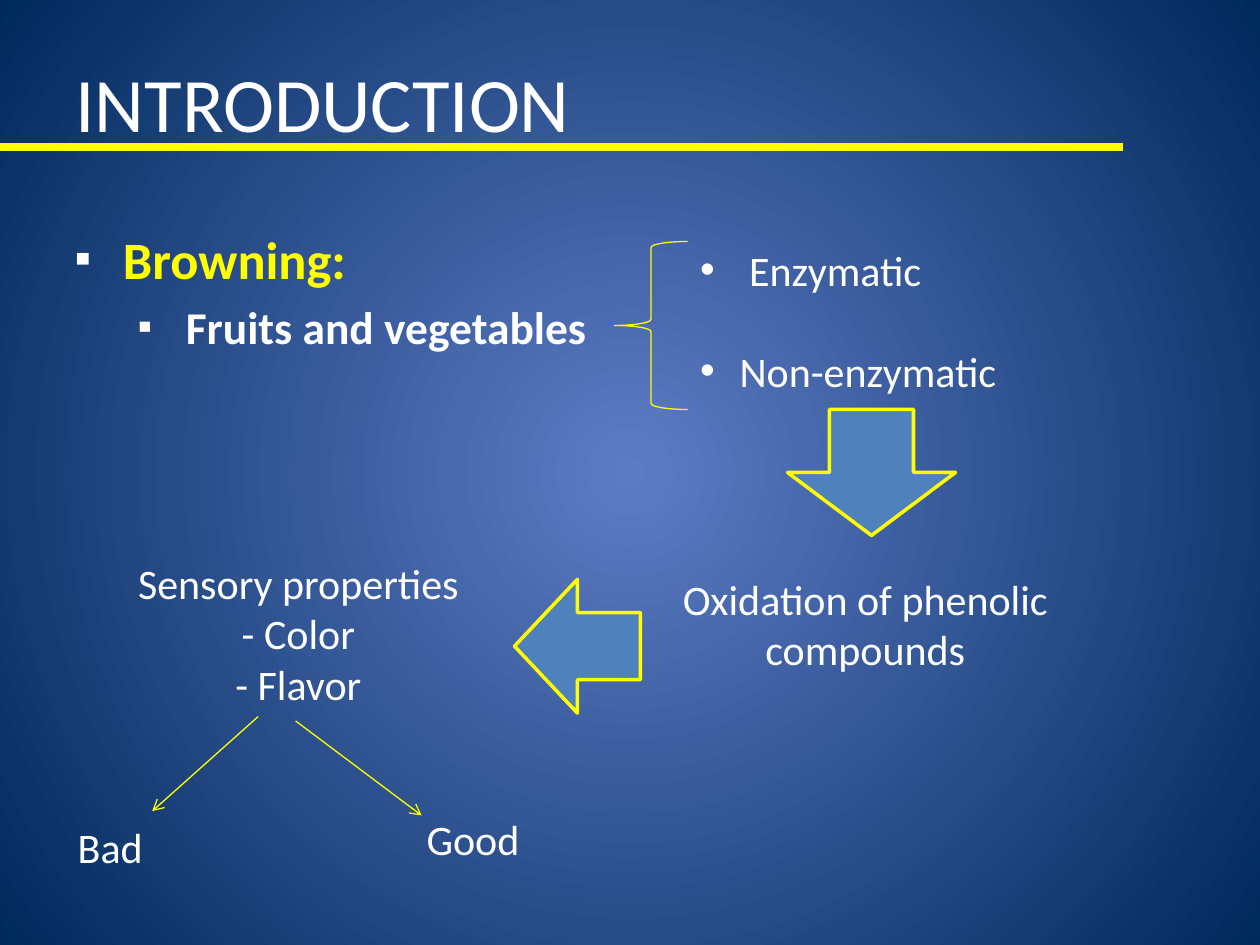
from lxml import etree
from pptx import Presentation
from pptx.dml.color import RGBColor
from pptx.enum.shapes import MSO_CONNECTOR, MSO_SHAPE
from pptx.enum.text import MSO_ANCHOR, MSO_AUTO_SIZE, PP_ALIGN
from pptx.oxml.ns import qn
from pptx.util import Pt

WHITE = RGBColor(0xFF, 0xFF, 0xFF)
YELLOW = RGBColor(0xFF, 0xFF, 0x00)
BLUE = RGBColor(0x4F, 0x81, 0xBD)
GLOW = RGBColor(0x5E, 0x7C, 0xC5)
NAVY = RGBColor(0x00, 0x29, 0x5C)
FONT = "Calibri"
LEFT, CENTER = PP_ALIGN.LEFT, PP_ALIGN.CENTER
MIDDLE = MSO_ANCHOR.MIDDLE
NO_FIT = MSO_AUTO_SIZE.NONE
STRAIGHT = MSO_CONNECTOR.STRAIGHT
BRACE = MSO_SHAPE.LEFT_BRACE
DOWN, BACK = MSO_SHAPE.DOWN_ARROW, MSO_SHAPE.LEFT_ARROW


def style(para, size, color=WHITE, bold=False, align=LEFT):
    para.alignment = align
    for run in para.runs:
        run.font.name = FONT
        run.font.size = Pt(size)
        run.font.bold = bold
        run.font.color.rgb = color


def bullet(para, char, left, hang, scale=100):
    props = para._p.get_or_add_pPr()
    props.set("marL", str(Pt(left)))
    props.set("indent", str(-Pt(hang)))
    tint = etree.SubElement(props, qn("a:buClr"))
    etree.SubElement(tint, qn("a:srgbClr"), val=str(WHITE))
    etree.SubElement(props, qn("a:buSzPct"), val=str(scale * 1000))
    etree.SubElement(props, qn("a:buFont"), typeface="Arial")
    etree.SubElement(props, qn("a:buChar"), char=char)


prs = Presentation()
prs.slide_width, prs.slide_height = Pt(720), Pt(540)
slide = prs.slides.add_slide(prs.slide_layouts[1])
shapes = slide.shapes

# Background: glow from the centre
fill = slide.background.fill
fill.gradient()
for stop, color, place in zip(fill.gradient_stops, (GLOW, NAVY), (0, 1)):
    stop.color.rgb = color
    stop.position = place
grad = slide.background._cSld.find(".//" + qn("a:gradFill"))
grad.remove(grad.find(qn("a:lin")))
round_fill = etree.SubElement(grad, qn("a:path"), path="circle")
etree.SubElement(round_fill, qn("a:fillToRect"),
                 l="50000", t="50000", r="50000", b="50000")

# Title
title = shapes.title
title.left, title.top, title.width, title.height = Pt(36), Pt(13), Pt(648), Pt(90)
title.text_frame.text = "INTRODUCTION"
title.text_frame.vertical_anchor = MIDDLE
style(title.text_frame.paragraphs[0], 44)

# Topic list
body = slide.placeholders[1]
body.left, body.top, body.width, body.height = Pt(36), Pt(126), Pt(378), Pt(108)
frame = body.text_frame
frame.auto_size = NO_FIT
frame.text = "Browning:\nFruits and vegetables"
topic, scope = frame.paragraphs
scope.level = 3
style(topic, 30, YELLOW, True)
style(scope, 26, WHITE, True)
bullet(topic, "■", 27, 27, 46)
bullet(scope, "■", 63, 27, 46)

# Text boxes: left, top, width, height, text, alignment
notes = [
    (393, 136, 243, 138, " Enzymatic\nNon-enzymatic", LEFT),
    (370, 324, 249, 65.5, "Oxidation of phenolic compounds", CENTER),
    (46, 315, 249, 94.5, "Sensory properties\n- Color\n- Flavor", CENTER),
    (0, 466, 126, 36, "Bad", CENTER),
    (210, 461.5, 126, 53, "Good ", CENTER),
]
for x, y, w, h, text, align in notes:
    frame = shapes.add_textbox(Pt(x), Pt(y), Pt(w), Pt(h)).text_frame
    frame.word_wrap = True
    frame.text = text
    for para in frame.paragraphs:
        style(para, 24, align=align)
        if align == LEFT:
            para.space_before = Pt(0 if para.text.startswith(" ") else 29)
            bullet(para, "•", 22.5, 22.5)

# Brace and block arrows
marks = [
    (BRACE, 351, 138, 42, 96, None, 0.75),
    (DOWN, 450, 234, 96, 72, BLUE, 2),
    (BACK, 294, 331, 72, 76.5, BLUE, 2),
]
for kind, x, y, w, h, color, weight in marks:
    mark = shapes.add_shape(kind, Pt(x), Pt(y), Pt(w), Pt(h))
    mark.shadow.inherit = False
    mark.line.color.rgb = YELLOW
    mark.line.width = Pt(weight)
    if color:
        mark.fill.solid()
        mark.fill.fore_color.rgb = color
    else:
        mark.fill.background()

# Title rule and thin arrows
lines = [
    (0, 84, 642, 84, 4.5, False),
    (147.5, 409.5, 87, 463.5, 0.75, True),
    (169, 412, 241, 466, 0.75, True),
]
for x1, y1, x2, y2, weight, head in lines:
    line = shapes.add_connector(STRAIGHT, Pt(x1), Pt(y1), Pt(x2), Pt(y2))
    line.line.color.rgb = YELLOW
    line.line.width = Pt(weight)
    if head:
        etree.SubElement(line.line._get_or_add_ln(), qn("a:tailEnd"), type="arrow")
    etree.SubElement(line._element.spPr, qn("a:effectLst"))

prs.save("out.pptx")
